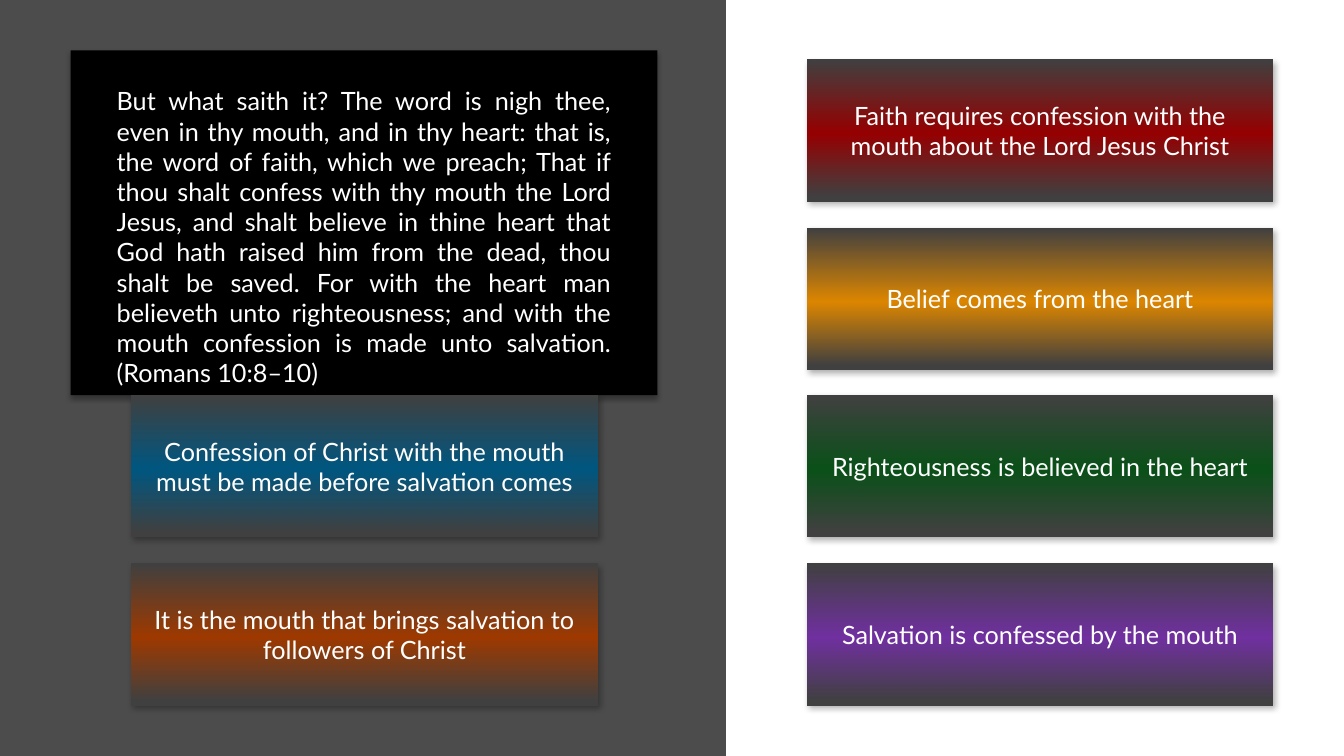
from dataclasses import dataclass

from lxml.etree import SubElement
from pptx import Presentation
from pptx.dml.color import RGBColor
from pptx.enum.shapes import MSO_SHAPE
from pptx.enum.text import MSO_ANCHOR, PP_ALIGN
from pptx.oxml.ns import qn
from pptx.shapes.autoshape import Shape
from pptx.slide import Slide
from pptx.util import Emu, Pt

EMU_PER_PX = 9144
CARD_TOP, CARD_WIDTH, CARD_HEIGHT = 59, 463, 141
CARD_PITCH = 500 / 3
LEFT_COLUMN, RIGHT_COLUMN = 130, 800

COLOURS = {
    "black": "000000",
    "white": "FFFFFF",
    "edge": "404040",
    "red": "950001",
    "amber": "DC8600",
    "green": "0A5018",
    "purple": "7030A0",
    "blue": "00567F",
    "rust": "9D3900",
}
FONT_FORMAT = {
    "name": "Lato",
    "size": Pt(18),
    "color.rgb": RGBColor.from_string(COLOURS["white"]),
}
VERSE = (
    "But what saith it? The word is nigh thee, even in thy mouth, and in thy heart: "
    "that is, the word of faith, which we preach; That if thou shalt confess with thy "
    "mouth the Lord Jesus, and shalt believe in thine heart that God hath raised him "
    "from the dead, thou shalt be saved. For with the heart man believeth unto "
    "righteousness; and with the mouth confession is made unto salvation. "
    "(Romans 10:8–10)"
)


@dataclass(frozen=True)
class Area:
    left: int
    top: int
    width: int
    height: int

    def emu(self) -> list[Emu]:
        sides = (self.left, self.top, self.width, self.height)
        return [Emu(side * EMU_PER_PX) for side in sides]


@dataclass(frozen=True)
class Shadow:
    opacity: int
    blur: float
    distance: float
    angle: int


@dataclass(frozen=True)
class Card:
    left: int
    row: int
    colour: str
    text: str


VERSE_SHADOW = Shadow(32, 3.5, 2.2, 90)
CARD_SHADOW = Shadow(30, 4.5, 2.6, 53)
CARDS = [
    Card(RIGHT_COLUMN, 0, "red",
         "Faith requires confession with the mouth about the Lord Jesus Christ"),
    Card(RIGHT_COLUMN, 1, "amber", "Belief comes from the heart"),
    Card(RIGHT_COLUMN, 2, "green", "Righteousness is believed in the heart"),
    Card(RIGHT_COLUMN, 3, "purple", "Salvation is confessed by the mouth"),
    Card(LEFT_COLUMN, 2, "blue",
         "Confession of Christ with the mouth must be made before salvation comes"),
    Card(LEFT_COLUMN, 3, "rust",
         "It is the mouth that brings salvation to followers of Christ"),
]


def add_box(page: Slide, area: Area) -> Shape:
    box = page.shapes.add_shape(MSO_SHAPE.RECTANGLE, *area.emu())
    box.line.fill.background()
    box.shadow.inherit = False
    return box


def set_opacity(colour_element, percent: int) -> None:
    SubElement(colour_element, qn("a:alpha"), val=str(percent * 1000))


def fill_black(box: Shape) -> None:
    box.fill.solid()
    box.fill.fore_color.rgb = RGBColor.from_string(COLOURS["black"])


def fill_band(box: Shape, colour: str) -> None:
    """Shade the box from grey through the colour and back, top to bottom."""
    box.fill.gradient()
    box.fill.gradient_angle = 270
    stops = box._element.spPr.find(".//" + qn("a:gsLst"))
    for stop in list(stops):
        stops.remove(stop)
    for position, name in ((0, "edge"), (52, colour), (97, "edge")):
        stop = SubElement(stops, qn("a:gs"), pos=str(position * 1000))
        SubElement(stop, qn("a:srgbClr"), val=COLOURS[name])


def add_shadow(box: Shape, shadow: Shadow) -> None:
    effects = box._element.spPr.find(qn("a:effectLst"))
    outer = SubElement(
        effects, qn("a:outerShdw"),
        blurRad=str(Pt(shadow.blur)), dist=str(Pt(shadow.distance)),
        dir=str(shadow.angle * 60000), algn="ctr", rotWithShape="0",
    )
    colour_element = SubElement(outer, qn("a:srgbClr"), val=COLOURS["black"])
    set_opacity(colour_element, shadow.opacity)


def write(box: Shape, text: str, alignment: PP_ALIGN, anchor: MSO_ANCHOR) -> None:
    frame = box.text_frame
    frame.word_wrap = True
    frame.vertical_anchor = anchor
    para = frame.paragraphs[0]
    para.alignment = alignment
    span = para.add_run()
    span.text = text
    for name, value in FONT_FORMAT.items():
        owner, _, attribute = name.rpartition(".")
        setattr(getattr(span.font, owner) if owner else span.font, attribute, value)


def add_panel(page: Slide) -> None:
    panel = add_box(page, Area(0, 0, 720, 750))
    fill_black(panel)
    set_opacity(panel._element.spPr.find(".//" + qn("a:srgbClr")), 70)


def add_verse(page: Slide) -> None:
    backdrop = add_box(page, Area(70, 50, 582, 342))
    fill_black(backdrop)
    add_shadow(backdrop, VERSE_SHADOW)
    verse = page.shapes.add_textbox(*Area(106, 80, 510, 283).emu())
    write(verse, VERSE, PP_ALIGN.JUSTIFY, MSO_ANCHOR.TOP)


def add_card(page: Slide, card: Card) -> None:
    top = CARD_TOP + round(card.row * CARD_PITCH)
    box = add_box(page, Area(card.left, top, CARD_WIDTH, CARD_HEIGHT))
    fill_band(box, card.colour)
    add_shadow(box, CARD_SHADOW)
    write(box, card.text, PP_ALIGN.CENTER, MSO_ANCHOR.MIDDLE)


def main() -> None:
    deck = Presentation()
    deck.slide_width = Emu(1333 * EMU_PER_PX)
    deck.slide_height = Emu(750 * EMU_PER_PX)
    page = deck.slides.add_slide(deck.slide_layouts[6])
    add_panel(page)
    add_verse(page)
    for card in CARDS:
        add_card(page, card)
    deck.save("out.pptx")


if __name__ == "__main__":
    main()
